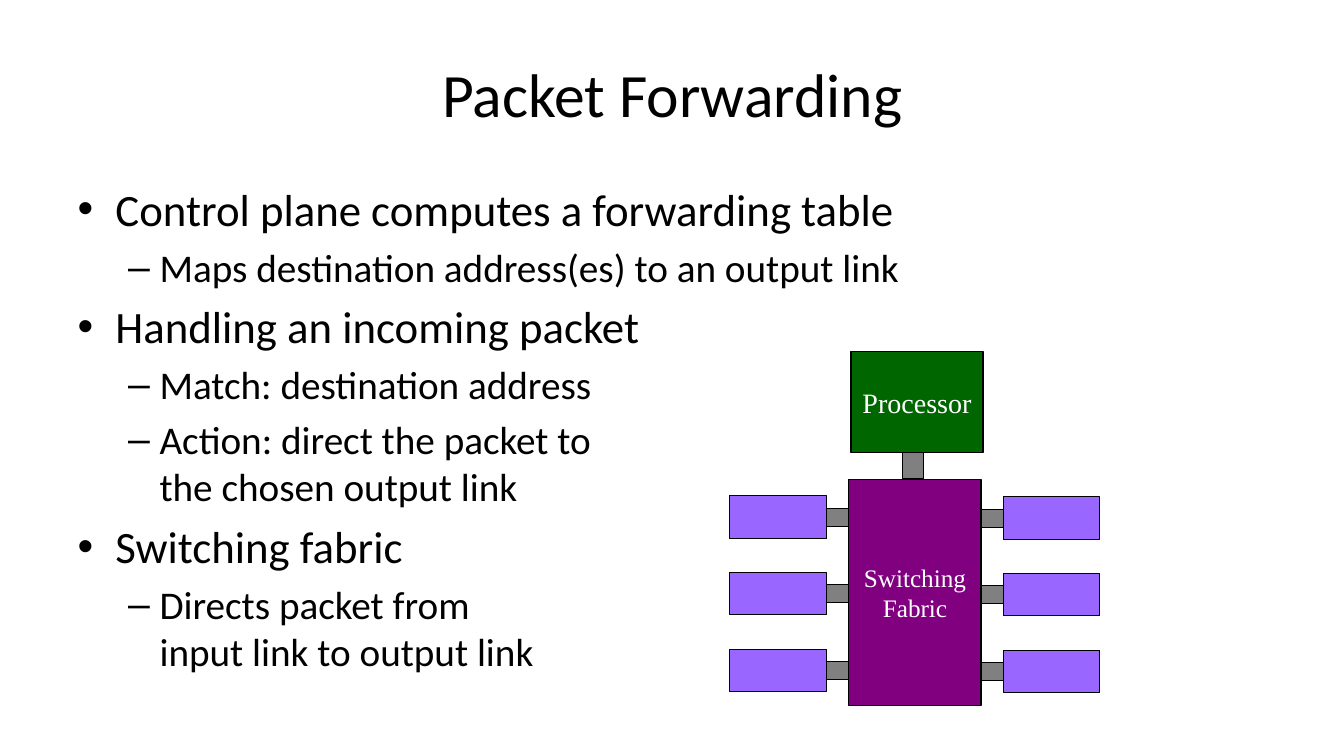
from pptx import Presentation
from pptx.dml.color import RGBColor
from pptx.enum.shapes import MSO_SHAPE
from pptx.enum.text import MSO_ANCHOR, PP_ALIGN
from pptx.util import Emu, Pt

EMU_PER_PX = 9144  # 100 px to the inch
BLACK = RGBColor(0x00, 0x00, 0x00)
WHITE = RGBColor(0xFF, 0xFF, 0xFF)
PURPLE = RGBColor(0x80, 0x00, 0x80)
GREEN = RGBColor(0x00, 0x66, 0x00)
GRAY = RGBColor(0x80, 0x80, 0x80)
VIOLET = RGBColor(0x99, 0x66, 0xFF)

POINTS = [
    (0, "Control plane computes a forwarding table"),
    (1, "Maps destination address(es) to an output link"),
    (0, "Handling an incoming packet"),
    (1, "Match: destination address"),
    (1, "Action: direct the packet to \vthe chosen output link"),
    (0, "Switching fabric"),
    (1, "Directs packet from \vinput link to output link"),
]


def px(length):
    return Emu(length * EMU_PER_PX)


class SlideBuilder:
    text_font = "Calibri"
    label_font = "Times New Roman"
    title_size = 44
    level_sizes = (32, 28)

    def __init__(self, page):
        self.page = page

    def place(self, shape, left, top, width, height):
        shape.left, shape.top = px(left), px(top)
        shape.width, shape.height = px(width), px(height)

    def style(self, para, font, size, color):
        for span in para.runs:
            span.font.name = font
            span.font.size = Pt(size)
            span.font.color.rgb = color

    def title(self, text, *bounds):
        box = self.page.shapes.title
        self.place(box, *bounds)
        box.text_frame.text = text
        self.style(box.text_frame.paragraphs[0], self.text_font, self.title_size, BLACK)

    def bullets(self, points, *bounds):
        """Fill the body placeholder with (level, text) pairs."""
        box = self.page.placeholders[1]
        self.place(box, *bounds)
        frame = box.text_frame
        frame.text = "\n".join(text for _, text in points)
        for para, (level, _) in zip(frame.paragraphs, points):
            para.level = level
            self.style(para, self.text_font, self.level_sizes[level], BLACK)

    def block(self, fill, left, top, width, height, label="", size=18):
        box = self.page.shapes.add_shape(
            MSO_SHAPE.RECTANGLE, px(left), px(top), px(width), px(height))
        box.shadow.inherit = False
        box.fill.solid()
        box.fill.fore_color.rgb = fill
        box.line.color.rgb = BLACK
        box.line.width = Pt(0.75)
        if label:
            frame = box.text_frame
            frame.word_wrap = False
            frame.vertical_anchor = MSO_ANCHOR.MIDDLE
            frame.text = label
            for para in frame.paragraphs:
                para.alignment = PP_ALIGN.CENTER
                self.style(para, self.label_font, size, WHITE)

    def port(self, card_left, joint_left, top):
        """Draw a line card and the joint that ties it to the fabric."""
        self.block(VIOLET, card_left, top, 96, 42)
        self.block(GRAY, joint_left, top + 12, 22, 18)


def main():
    deck = Presentation()
    deck.slide_width, deck.slide_height = px(1333), px(750)
    slide = SlideBuilder(deck.slides.add_slide(deck.slide_layouts[1]))

    slide.title("Packet Forwarding", 67, 30, 1200, 125)
    slide.bullets(POINTS, 67, 175, 1200, 495)

    slide.block(PURPLE, 842, 476, 131, 224, "Switching\nFabric", 18)
    slide.block(GREEN, 844, 349, 131, 100, "Processor", 20)
    slide.block(GRAY, 895, 449, 21, 26)
    for card_left, joint_left, first_top in ((724, 820, 492), (995, 973, 493)):
        for row in range(3):
            slide.port(card_left, joint_left, first_top + 76 * row)

    deck.save("out.pptx")


if __name__ == "__main__":
    main()
